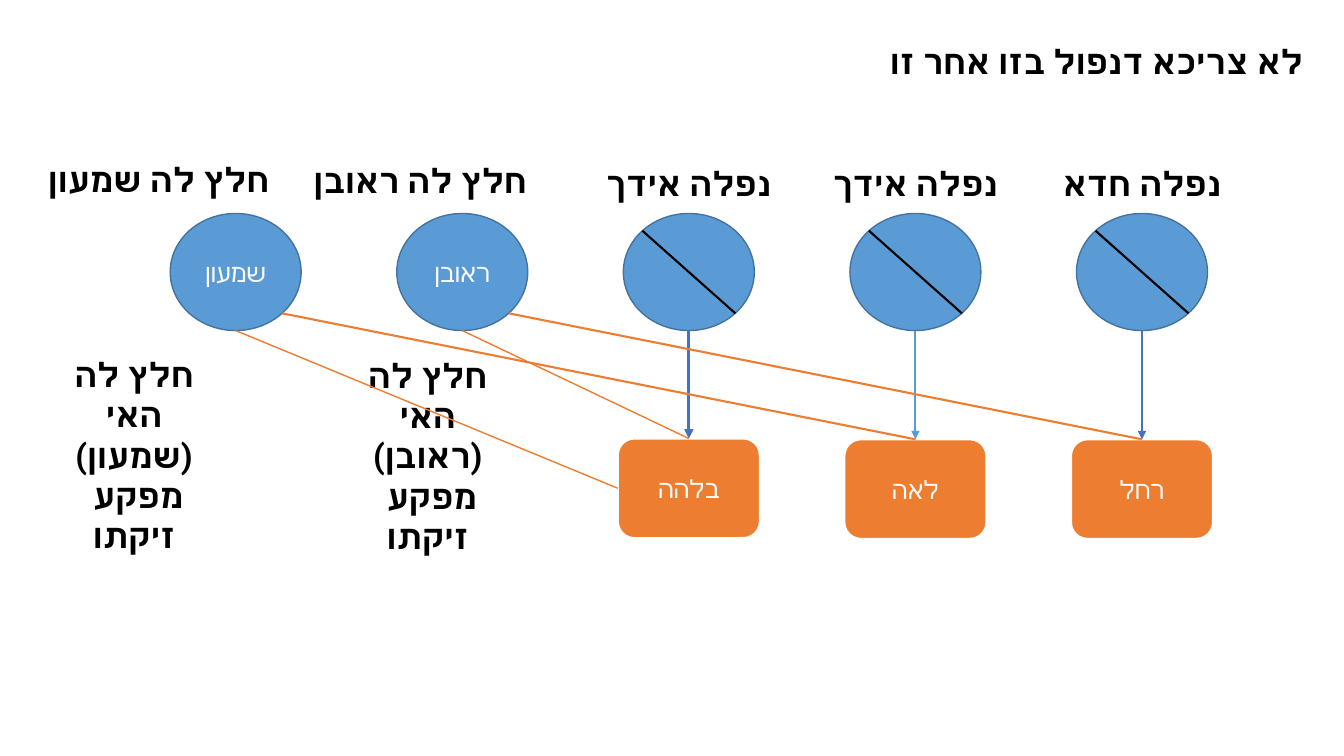
import pptx
import pptx.util
import pptx.dml.color
import pptx.enum.shapes
import pptx.enum.text
import pptx.oxml
import pptx.oxml.ns

Cm, Pt = pptx.util.Cm, pptx.util.Pt
SHAPE = pptx.enum.shapes.MSO_SHAPE
COLORS = {"circle": "5B9BD5", "circle_edge": "43739E", "box": "ED7D31",
          "arrow": "4472C4", "white": "FFFFFF", "black": "000000"}
COLORS = {name: pptx.dml.color.RGBColor.from_string(value) for name, value in COLORS.items()}

presentation = pptx.Presentation()
presentation.slide_width, presentation.slide_height = Cm(33.87), Cm(19.05)
slide = presentation.slides.add_slide(presentation.slide_layouts[5])
shapes = slide.shapes


def write(shape, text, size, color, bold, anchor):
    """Put centred text, one paragraph per line, into a shape."""
    frame = shape.text_frame
    frame.text = text
    frame.word_wrap = True
    frame.auto_size = pptx.enum.text.MSO_AUTO_SIZE.NONE
    frame.vertical_anchor = anchor
    for paragraph in frame.paragraphs:
        paragraph.alignment = pptx.enum.text.PP_ALIGN.CENTER
        for run in paragraph.runs:
            run.font.name = "Roboto"
            run.font.size = Pt(size)
            run.font.bold = bold
            run.font.color.rgb = COLORS[color]
            # Hebrew takes its typeface from the complex-script font
            hebrew_font = pptx.oxml.parse_xml(
                f'<a:cs {pptx.oxml.ns.nsdecls("a")} typeface="Roboto"/>')
            run.font._element.append(hebrew_font)


def add_line(start, end, color, width, box=None, side=0, arrow=False):
    """Draw a straight line, joined to a side of box if one is given."""
    line = shapes.add_connector(pptx.enum.shapes.MSO_CONNECTOR.STRAIGHT,
                                Cm(start[0]), Cm(start[1]), Cm(end[0]), Cm(end[1]))
    line.line.color.rgb = COLORS[color]
    line.line.width = Pt(width)
    if box is not None:
        line.end_connect(box, side)
    namespace = pptx.oxml.ns.nsdecls("a")
    if arrow:
        line.line._get_or_add_ln().append(
            pptx.oxml.parse_xml(f'<a:tailEnd {namespace} type="triangle"/>'))
    line._element.spPr.append(pptx.oxml.parse_xml(f"<a:effectLst {namespace}/>"))


TOP = pptx.enum.text.MSO_ANCHOR.TOP
MIDDLE = pptx.enum.text.MSO_ANCHOR.MIDDLE

title = shapes.title
title.left, title.top, title.width, title.height = Cm(21.41), Cm(0.91), Cm(12.45), Cm(1.27)
write(title, "לא צריכא דנפול בזו אחר זו", 24, "black", True, TOP)

# Five circles, evenly spaced from left to right
FIRST_CENTER, STEP = 5.94, 5.71
centers = [FIRST_CENTER + STEP * column for column in range(5)]
CIRCLE_WIDTH, CIRCLE_HEIGHT, CIRCLE_TOP = 3.3, 2.95, 5.38
CIRCLE_BOTTOM = CIRCLE_TOP + CIRCLE_HEIGHT
CIRCLE_MIDDLE = CIRCLE_TOP + CIRCLE_HEIGHT / 2
DIAGONAL_X, DIAGONAL_Y = 1.17, 1.04  # from a circle's centre to its rim at 45 degrees

for center, name in zip(centers, ["שמעון", "ראובן", "", "", ""]):
    circle = shapes.add_shape(SHAPE.OVAL, Cm(center - CIRCLE_WIDTH / 2), Cm(CIRCLE_TOP),
                              Cm(CIRCLE_WIDTH), Cm(CIRCLE_HEIGHT))
    circle.shadow.inherit = False
    circle.fill.solid()
    circle.fill.fore_color.rgb = COLORS["circle"]
    circle.line.color.rgb = COLORS["circle_edge"]
    circle.line.width = Pt(1)
    if name:
        write(circle, name, 18, "white", False, MIDDLE)

# Boxes, each with an arrow from the struck-out circle above it
BOX_WIDTH, BOX_HEIGHT = 3.58, 2.51
boxes = []
for center, name, top, arrow_color, arrow_width in [
        (centers[2], "בלהה", 11.05, "arrow", 2.25),
        (centers[3], "לאה", 11.07, "circle", 1.5),
        (centers[4], "רחל", 11.07, "arrow", 1.5)]:
    box = shapes.add_shape(SHAPE.ROUNDED_RECTANGLE, Cm(center - BOX_WIDTH / 2), Cm(top),
                           Cm(BOX_WIDTH), Cm(BOX_HEIGHT))
    box.shadow.inherit = False
    box.fill.solid()
    box.fill.fore_color.rgb = COLORS["box"]
    box.line.color.rgb = COLORS["white"]
    box.line.width = Pt(1.5)
    write(box, name, 18, "white", False, MIDDLE)
    boxes.append(box)
    add_line((center, CIRCLE_BOTTOM), (center, top), arrow_color, arrow_width, box, arrow=True)
    add_line((center - DIAGONAL_X, CIRCLE_MIDDLE - DIAGONAL_Y),
             (center + DIAGONAL_X, CIRCLE_MIDDLE + DIAGONAL_Y), "black", 1.5)

# Captions: centre, top, width, height, text
for center, top, width, height, text in [
        (centers[4], 3.99, 4.78, 1.27, "נפלה חדא"),
        (centers[3], 3.99, 5.31, 1.27, "נפלה אידך"),
        (centers[2], 3.99, 5.26, 1.27, "נפלה אידך"),
        (10.59, 3.91, 6.05, 1.27, "חלץ לה ראובן"),
        (4, 3.89, 6.63, 1.27, "חלץ לה שמעון"),
        (10.78, 8.81, 4.95, 3.33, "חלץ לה האי\n(ראובן)\n מפקע זיקתו"),
        (3.38, 8.79, 5.08, 3.33, "חלץ לה האי\n(שמעון)\n מפקע זיקתו")]:
    caption = shapes.add_textbox(Cm(center - width / 2), Cm(top), Cm(width), Cm(height))
    write(caption, text, 24, "black", True, TOP)

# Orange lines from the named circles to the boxes
left_box, middle_box, right_box = boxes
shimon_x, reuven_x = centers[:2]
RIM_Y = CIRCLE_MIDDLE + DIAGONAL_Y
for start, box, side, width in [
        ((reuven_x + DIAGONAL_X, RIM_Y), right_box, 0, 1.5),
        ((shimon_x + DIAGONAL_X, RIM_Y), middle_box, 0, 1.5),
        ((reuven_x, CIRCLE_BOTTOM), left_box, 0, 1),
        ((shimon_x, CIRCLE_BOTTOM), left_box, 1, 1)]:
    add_line(start, (box.left.cm, box.top.cm), "box", width, box, side)

presentation.save("out.pptx")
